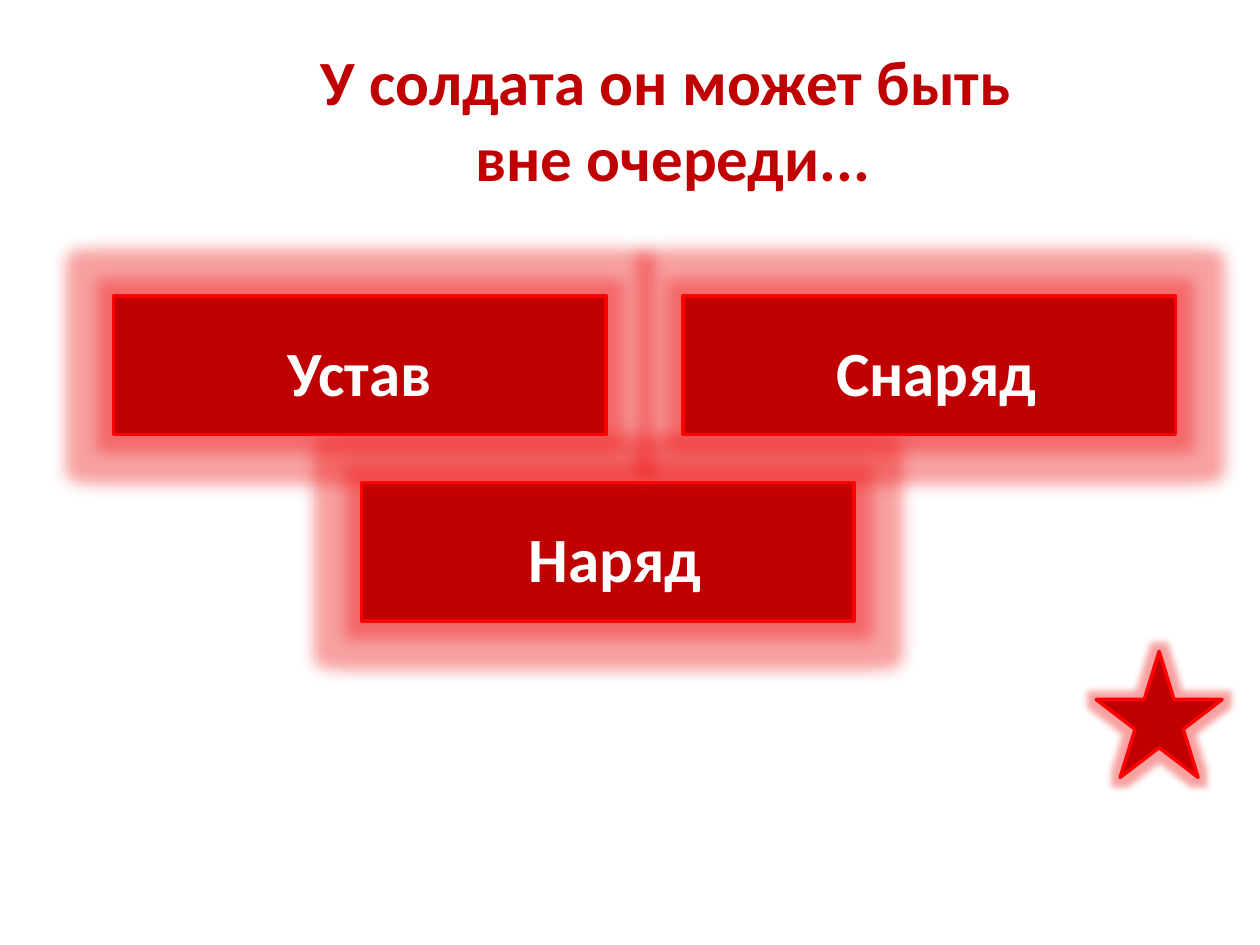
from dataclasses import dataclass
from lxml.etree import SubElement as Sub
from pptx import Presentation
from pptx.dml.color import RGBColor as RGB
from pptx.enum.shapes import MSO_SHAPE as SHAPE
from pptx.enum.text import MSO_ANCHOR as ANCHOR, MSO_AUTO_SIZE as AUTO, PP_ALIGN as ALIGN
from pptx.oxml.ns import qn
from pptx.util import Inches, Pt


@dataclass(frozen=True)
class Theme:
    dark: RGB = RGB(0xC0, 0, 0)
    edge: RGB = RGB(0xFF, 0, 0)
    glow: RGB = RGB(0xEE, 0x14, 0x14)
    white: RGB = RGB(0xFF, 0xFF, 0xFF)
    face: str = "Calibri"
    size: Pt = Pt(36)
    rim: Pt = Pt(2)


THEME = Theme()


def apply(item, form):
    for name, value in form.items():
        setattr(item, name, value)


def write(par, text, color, **form):
    run = par.add_run()
    run.text = text
    apply(run.font, {"name": THEME.face, "size": THEME.size, "bold": True})
    run.font.color.rgb = color
    apply(par, {"alignment": ALIGN.CENTER, **form})


def add_glow(shape, size):
    effect = Sub(shape._element.spPr, qn("a:effectLst"))
    glow = Sub(effect, qn("a:glow"), rad=str(Pt(size)))
    color = Sub(glow, qn("a:srgbClr"), val=str(THEME.glow))
    Sub(color, qn("a:alpha"), val="40000")


def add_red(slide, kind, box, glow):
    shape = slide.shapes.add_shape(kind, *map(Inches, box))
    shape.fill.solid()
    shape.fill.fore_color.rgb = THEME.dark
    shape.line.color.rgb = THEME.edge
    shape.line.width = THEME.rim
    add_glow(shape, glow)
    return shape


def add_answer(slide, text, left, top):
    shape = add_red(slide, SHAPE.RECTANGLE, (left, top, 3.91, 1.1), 18)
    frame = shape.text_frame
    apply(frame, {"word_wrap": True, "vertical_anchor": ANCHOR.MIDDLE})
    write(frame.paragraphs[0], text, THEME.white, line_spacing=1.15, space_after=Pt(10))


def add_title(slide, lines):
    title = slide.shapes.title
    apply(title, {"left": Inches(1.52), "top": Inches(0.29),
                  "width": Inches(7.64), "height": Inches(1.31)})
    frame = title.text_frame
    apply(frame, {"word_wrap": True, "auto_size": AUTO.SHAPE_TO_FIT_TEXT,
                  "vertical_anchor": ANCHOR.TOP})
    for i, line in enumerate(lines):
        par = frame.add_paragraph() if i else frame.paragraphs[0]
        write(par, line, THEME.dark)


def main():
    deck = Presentation()
    apply(deck, {"slide_width": Inches(10), "slide_height": Inches(7.5)})
    slide = deck.slides.add_slide(deck.slide_layouts[5])
    add_title(slide, ("У солдата он может быть ", "вне очереди..."))
    for text, left, top in ((" Наряд", 2.87, 3.83), ("Устав", 0.9, 2.35), (" Снаряд", 5.42, 2.35)):
        add_answer(slide, text, left, top)
    add_red(slide, SHAPE.STAR_5_POINT, (8.7, 5.17, 1, 1), 8)
    deck.save("out.pptx")


if __name__ == "__main__":
    main()
